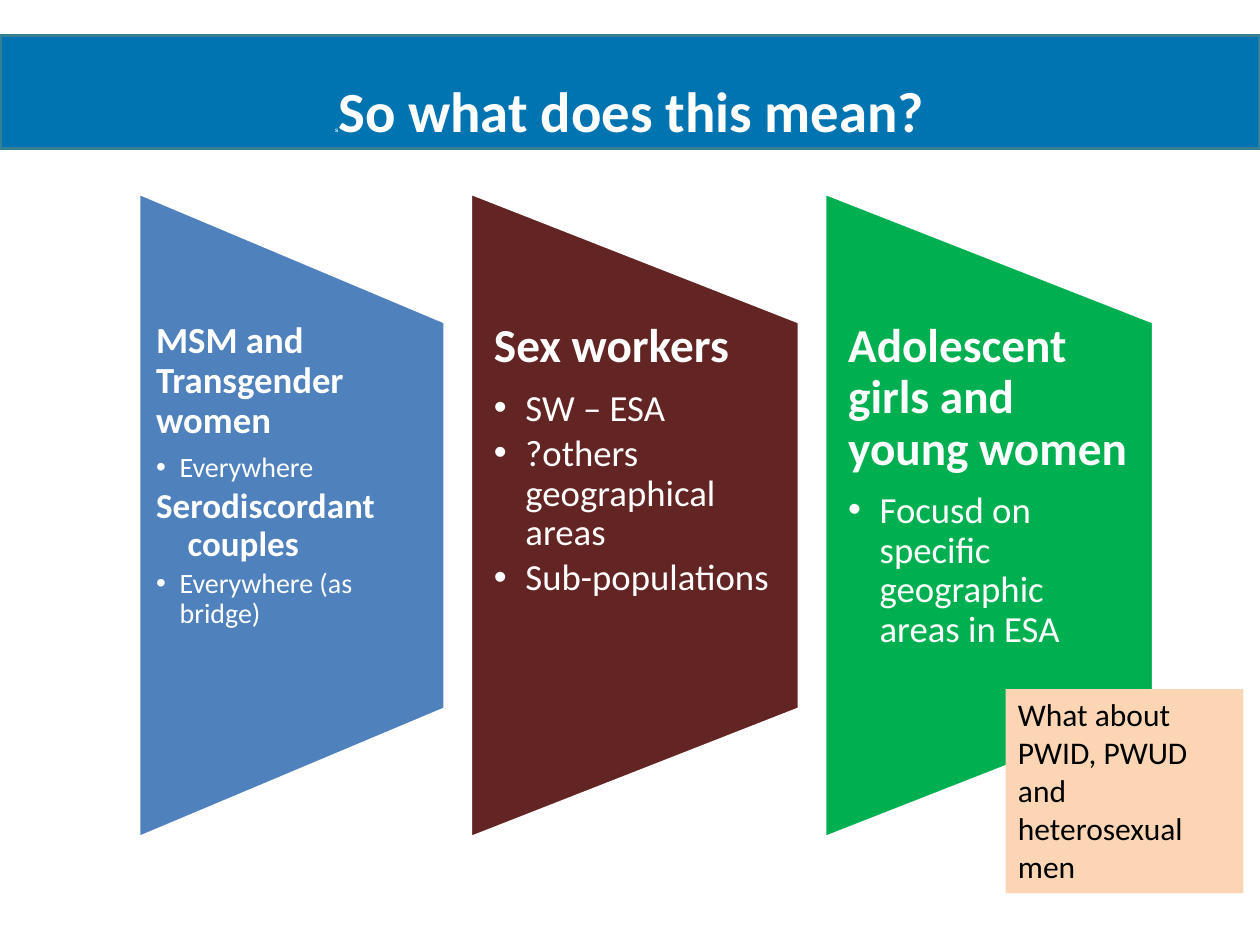
from lxml.etree import SubElement
from pptx import Presentation
from pptx.dml.color import RGBColor
from pptx.enum.shapes import MSO_SHAPE as Shape
from pptx.enum.text import MSO_ANCHOR as Anchor, MSO_AUTO_SIZE as AutoSize, PP_ALIGN as Align
from pptx.oxml.ns import qn
from pptx.util import Pt

WHITE = RGBColor(0xFF, 0xFF, 0xFF)
BLACK = RGBColor(0, 0, 0)
BAR_BLUE = RGBColor(0x00, 0x73, 0xB1)
BAR_EDGE = RGBColor(0x37, 0x7F, 0x92)
BLUE = RGBColor(0x4F, 0x81, 0xBD)
MAROON = RGBColor(0x63, 0x25, 0x23)
GREEN = RGBColor(0x00, 0xB0, 0x50)
PEACH = RGBColor(0xFC, 0xD5, 0xB5)

TITLE = [("S", "Arial", 2.7), ("So what does this mean?", "Calibri", 32.4)]
NOTE = "What about PWID, PWUD and heterosexual men"

# Kind of line: bold, bullet, space after as a share of the text size
KINDS = {
    "head": (True, False, 0.35),
    "subhead": (True, False, 0.15),
    "item": (False, True, 0.15),
}
PANELS = [
    {"fill": BLUE, "width": 175.2, "inset": 10,
     "sizes": {"head": 21, "subhead": 20, "item": 16},
     "indents": {"head": 0, "subhead": 18, "item": 13.5},
     "lines": [("head", "MSM and Transgender women"), ("item", "Everywhere"),
               ("subhead", "Serodiscordant couples"), ("item", "Everywhere (as bridge)")]},
    {"fill": MAROON, "width": 188, "inset": 13.5,
     "sizes": {"head": 27, "item": 21}, "indents": {"head": 0, "item": 18},
     "lines": [("head", "Sex workers"), ("item", "SW – ESA"),
               ("item", "?others geographical areas"), ("item", "Sub-populations")]},
    {"fill": GREEN, "width": 188, "inset": 13.5,
     "sizes": {"head": 27, "item": 21}, "indents": {"head": 0, "item": 18},
     "lines": [("head", "Adolescent girls and young women"),
               ("item", "Focusd on specific geographic areas in ESA")]},
]
PANEL_LEFT, PANEL_GAP = 79.2, 14.4
PANEL_HEIGHT, TEXT_HEIGHT, PANEL_MIDDLE = 368.6, 221, 294.5


def set_all(target, values):
    for name, value in values.items():
        setattr(target, name, value)


def place(shape, left, top, width, height):
    set_all(shape, {"left": Pt(left), "top": Pt(top), "width": Pt(width), "height": Pt(height)})


def paint(shape, fill, edge=None):
    shape.fill.solid()
    shape.fill.fore_color.rgb = fill
    if edge is None:
        shape.line.fill.background()
    else:
        shape.line.color.rgb = edge
        shape.line.width = Pt(2)


def add_span(para, text, size, color, bold=False, name="Calibri"):
    span = para.add_run()
    span.text = text
    set_all(span.font, {"name": name, "size": Pt(size), "bold": bold})
    span.font.color.rgb = color


def set_indent(para, indent, bullet):
    """Hang the first line by the indent, with or without a bullet."""
    props = para._p.get_or_add_pPr()
    props.set("marL", str(Pt(indent)))
    props.set("indent", str(-Pt(indent)))
    if bullet:
        SubElement(props, qn("a:buFont")).set("typeface", "Arial")
        SubElement(props, qn("a:buChar")).set("char", "•")
    else:
        SubElement(props, qn("a:buNone"))


def add_title(page):
    title = page.shapes.title
    place(title, 0, 20.2, 720, 64.8)
    paint(title, BAR_BLUE, BAR_EDGE)
    frame = title.text_frame
    set_all(frame, {"auto_size": AutoSize.NONE, "vertical_anchor": Anchor.MIDDLE,
                    "margin_top": Pt(20), "margin_bottom": Pt(0)})
    para = frame.paragraphs[0]
    para.alignment = Align.CENTER
    for text, name, size in TITLE:
        add_span(para, text, size, WHITE, True, name)


def add_panel(page, panel, left):
    width = panel["width"]
    # The frame is given before the quarter turn, so its sides are swapped.
    shape = page.shapes.add_shape(Shape.FLOWCHART_MANUAL_OPERATION, 0, 0, 0, 0)
    place(shape, left + (width - PANEL_HEIGHT) / 2, PANEL_MIDDLE - width / 2, PANEL_HEIGHT, width)
    shape.rotation = 270
    shape.shadow.inherit = False
    paint(shape, panel["fill"], WHITE)

    box = page.shapes.add_textbox(0, 0, 0, 0)
    place(box, left, PANEL_MIDDLE - TEXT_HEIGHT / 2, width, TEXT_HEIGHT)
    frame = box.text_frame
    inset = Pt(panel["inset"])
    set_all(frame, {"word_wrap": True, "margin_left": inset, "margin_right": inset,
                    "margin_top": 0, "margin_bottom": 0})
    for index, (kind, text) in enumerate(panel["lines"]):
        para = frame.add_paragraph() if index else frame.paragraphs[0]
        bold, bullet, share = KINDS[kind]
        size = panel["sizes"][kind]
        set_all(para, {"line_spacing": 0.9, "space_after": Pt(round(size * share, 1))})
        set_indent(para, panel["indents"][kind], bullet)
        add_span(para, text, size, WHITE, bold)


def add_note(page):
    note = page.shapes.add_textbox(0, 0, 0, 0)
    place(note, 574.6, 393.8, 136, 116.6)
    paint(note, PEACH)
    set_all(note.text_frame, {"word_wrap": True, "auto_size": AutoSize.SHAPE_TO_FIT_TEXT})
    add_span(note.text_frame.paragraphs[0], NOTE, 18, BLACK)


def main():
    deck = Presentation()
    set_all(deck, {"slide_width": Pt(720), "slide_height": Pt(540)})
    page = deck.slides.add_slide(deck.slide_layouts[5])
    add_title(page)
    left = PANEL_LEFT
    for panel in PANELS:
        add_panel(page, panel, left)
        left += panel["width"] + PANEL_GAP
    add_note(page)
    deck.save("out.pptx")


if __name__ == "__main__":
    main()
